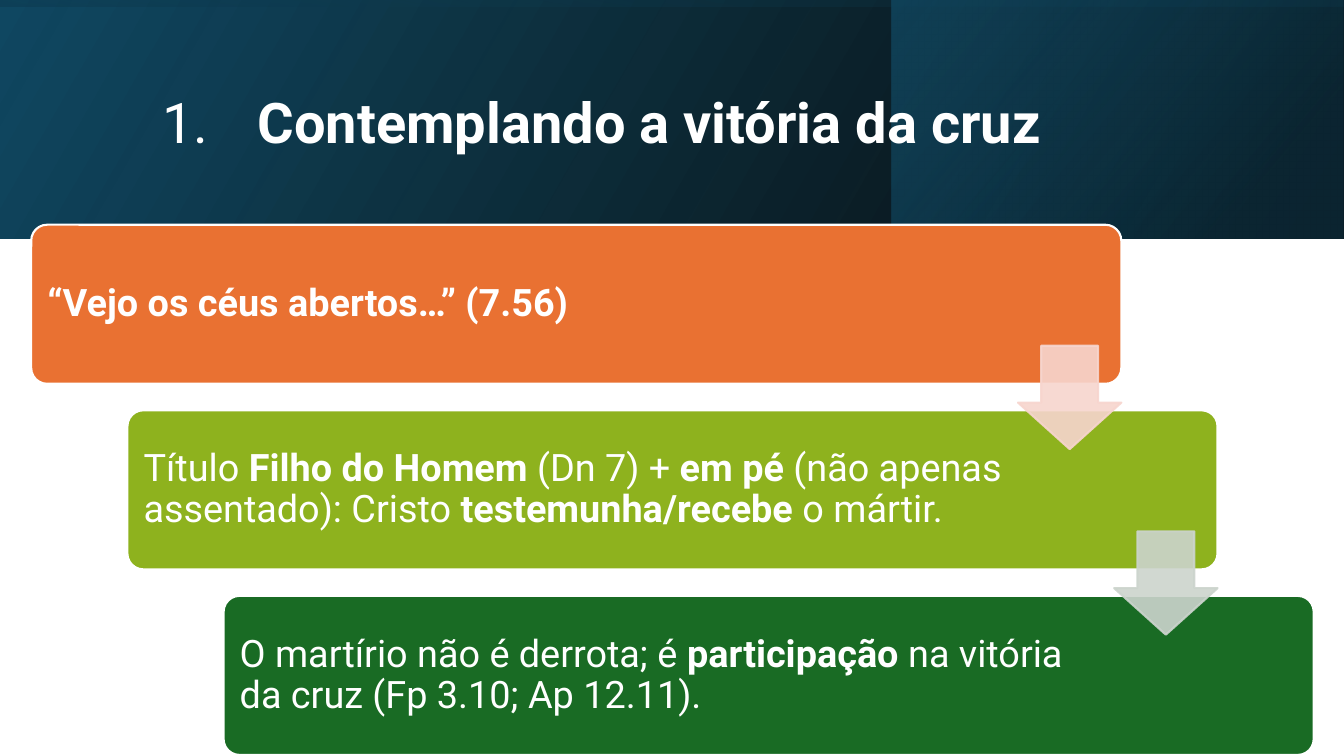
from lxml.etree import SubElement
from pptx import Presentation
from pptx.dml.color import RGBColor
from pptx.enum.shapes import MSO_SHAPE as Kind
from pptx.enum.text import MSO_ANCHOR as Anchor
from pptx.oxml.ns import qn
from pptx.util import Inches, Pt

WIDE, HIGH = 13.33, 7.5
WHITE = RGBColor(0xFF, 0xFF, 0xFF)
BLACK = RGBColor(0x00, 0x00, 0x00)
NAVY = RGBColor(0x10, 0x48, 0x62)
DEEP = RGBColor(0x0B, 0x30, 0x41)
TEAL = RGBColor(0x15, 0x60, 0x82)
ORANGE = RGBColor(0xE9, 0x71, 0x32)
LIME = RGBColor(0x8E, 0xB2, 0x1E)
GREEN = RGBColor(0x19, 0x6B, 0x24)
ROSE = RGBColor(0xF7, 0xD5, 0xCE)
GREY = RGBColor(0xCC, 0xD4, 0xCD)

STEPS = [
    (ORANGE, 9.11, [("“Vejo os céus abertos…” (7.56)", True)]),
    (LIME, 8.74, [
        ("Título ", False), ("Filho do Homem", True), (" (Dn 7) + ", False),
        ("em pé", True), (" (não apenas assentado): Cristo ", False),
        ("testemunha/recebe", True), (" o mártir.", False)]),
    (GREEN, 8.74, [
        ("O martírio não é derrota; é ", False), ("participação", True),
        (" na vitória da cruz (Fp 3.10; Ap 12.11).", False)]),
]
TITLE = [(" ", False), ("Contemplando a vitória da cruz", True)]


def add_form(slide, kind, box, adjust=()):
    form = slide.shapes.add_shape(kind, *map(Inches, box))
    form.shadow.inherit = False
    for i, share in enumerate(adjust):
        form.adjustments[i] = share
    return form


def paint(form, color):
    form.fill.solid()
    form.fill.fore_color.rgb = color
    form.line.color.rgb = color
    form.line.width = Pt(1.5)


def fade(form, shares):
    tints = form.element.spPr.iter(qn("a:srgbClr"))
    for tint, share in zip(tints, shares):
        SubElement(tint, qn("a:alpha"), val=str(share * 1000))


def add_text(slide, box, runs, size, inset):
    frame = slide.shapes.add_textbox(*map(Inches, box)).text_frame
    side, edge = map(Inches, inset)
    look = {"word_wrap": True, "vertical_anchor": Anchor.MIDDLE,
            "margin_left": side, "margin_right": side,
            "margin_top": edge, "margin_bottom": edge}
    for name, value in look.items():
        setattr(frame, name, value)
    para = frame.paragraphs[0]
    para.line_spacing = 0.9
    for words, bold in runs:
        run = para.add_run()
        run.text = words
        for name, value in {"name": "Roboto", "size": Pt(size), "bold": bold}.items():
            setattr(run.font, name, value)
        run.font.color.rgb = WHITE
    return para


def add_blend(slide, box, stops, angle, turn=0):
    form = add_form(slide, Kind.RECTANGLE, box)
    form.rotation = turn
    form.element.spPr.xfrm.set("flipH", "1")
    form.line.fill.background()
    form.fill.gradient()
    form.fill.gradient_angle = 360 - angle
    for stop, (place, color, _) in zip(form.fill.gradient_stops, stops):
        stop.position = place / 100
        stop.color.rgb = color
    fade(form, [share for _, _, share in stops])


def add_banner(slide, box):
    left, top, wide, high = box
    add_blend(slide, box, [(0, BLACK, 96), (100, NAVY, 100)], 330)
    part = wide * 0.3364
    add_blend(slide, (left + wide - part, top, part, high),
              [(19, DEEP, 68), (100, TEAL, 48)], 320)
    shift = (wide - high) / 2
    add_blend(slide, (left + shift, top - shift, high, wide),
              [(23, NAVY, 16), (99, BLACK, 45)], 350, 270)
    para = add_text(slide, (left + 1.51, top + 0.38, 10.63, 1.72), TITLE, 40, (0.1, 0.05))
    props = para._p.get_or_add_pPr()
    props.set("marL", str(Inches(0.81)))
    props.set("indent", str(-Inches(0.81)))
    SubElement(props, qn("a:buFont"), typeface="+mj-lt")
    SubElement(props, qn("a:buAutoNum"), type="arabicPeriod")


def add_stairs(slide, box):
    left, top, wide, high = box
    span, tall = wide * 0.85, high * 0.3
    across, down = (wide - span) / 2, (high - tall) / 2
    for i, (color, reach, runs) in enumerate(STEPS):
        x, y = left + i * across, top + i * down
        step = add_form(slide, Kind.ROUNDED_RECTANGLE, (x, y, span, tall), [0.1])
        paint(step, color)
        step.line.color.rgb = WHITE
        add_text(slide, (x + 0.05, y + 0.05, reach, tall - 0.1), runs, 27, (0.11, 0.11))
    side = tall * 0.65
    for i, color in enumerate([ROSE, GREY]):
        x = left + span - side + i * across
        y = top + 1.2 + i * down
        arrow = add_form(slide, Kind.DOWN_ARROW, (x, y, side, side), [0.55, 0.45])
        arrow.adjustments[0], arrow.adjustments[1] = 0.55, 0.45
        paint(arrow, color)
        fade(arrow, [90, 90])


def main():
    deck = Presentation()
    deck.slide_width, deck.slide_height = Inches(WIDE), Inches(HIGH)
    slide = deck.slides.add_slide(deck.slide_layouts[6])
    add_banner(slide, (0, 0, WIDE, HIGH * 0.316))
    add_stairs(slide, (0.31, 2.23, 12.72, 5.26))
    deck.save("out.pptx")


if __name__ == "__main__":
    main()
